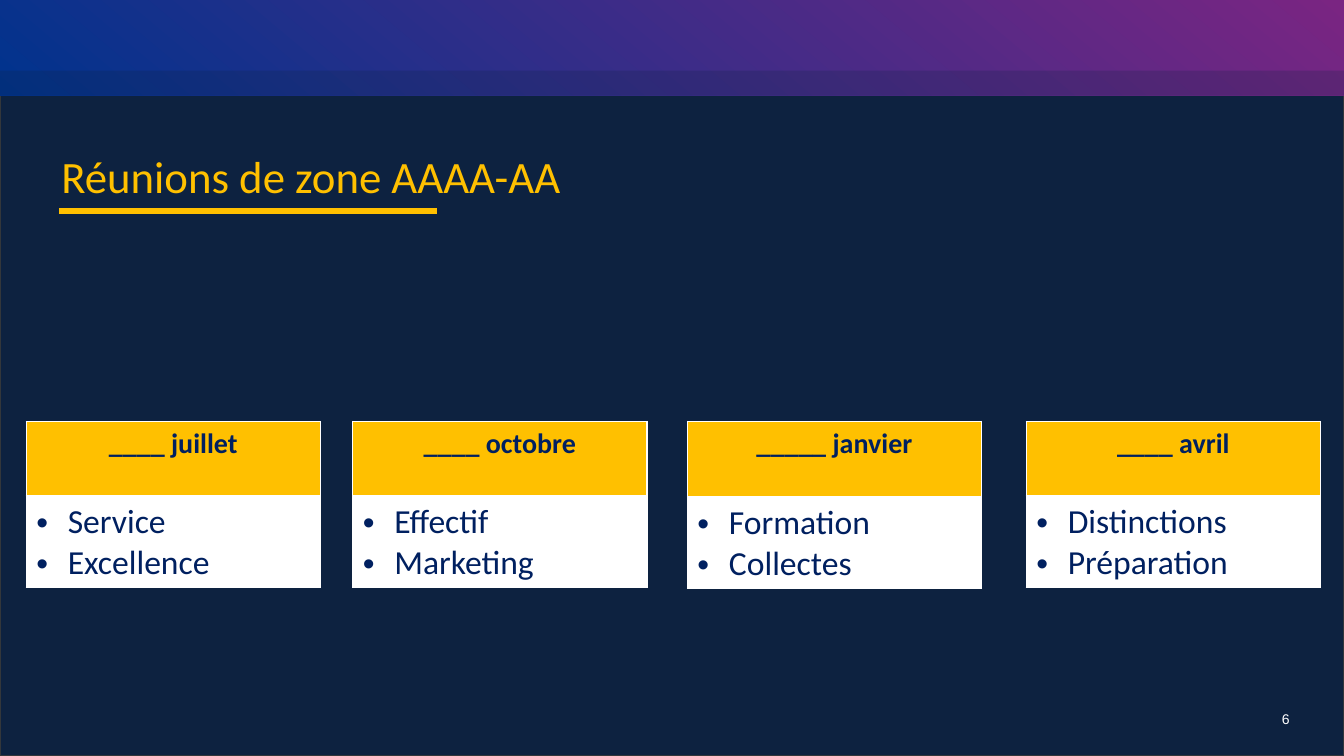
from dataclasses import dataclass

from lxml.etree import SubElement
from pptx import Presentation
from pptx.dml.color import RGBColor
from pptx.enum.shapes import MSO_CONNECTOR, MSO_SHAPE
from pptx.enum.text import MSO_AUTO_SIZE, PP_ALIGN
from pptx.oxml.ns import qn
from pptx.shapes.autoshape import Shape
from pptx.slide import Slide
from pptx.table import _Cell
from pptx.text.text import TextFrame
from pptx.util import Pt

NAVY = "0D2240"
INK = "002060"
GOLD = "FFC000"
WHITE = "FFFFFF"


@dataclass
class Meeting:
    left: float
    month: str
    topics: list[str]
    header_height: float = 54


MEETINGS = [
    Meeting(18.7, "____ juillet", ["Service", "Excellence"]),
    Meeting(252, "____ octobre", ["Effectif", "Marketing"]),
    Meeting(491, "_____ janvier", ["Formation", "Collectes"], 54.7),
    Meeting(733, "____ avril", ["Distinctions", "Préparation"]),
]


def color(value: str) -> RGBColor:
    return RGBColor.from_string(value)


def write_text(frame: TextFrame, *lines: str, size: float, ink: str, font: str = "Calibri",
               bold: bool = False, align: PP_ALIGN = PP_ALIGN.LEFT, bullet: bool = False) -> None:
    frame.word_wrap = True
    for index, line in enumerate(lines):
        paragraph = frame.add_paragraph() if index else frame.paragraphs[0]
        paragraph.alignment = align
        run = paragraph.add_run()
        run.text = line
        run.font.size = Pt(size)
        run.font.name = font
        run.font.bold = bold
        run.font.color.rgb = color(ink)
        if bullet:
            properties = paragraph._p.get_or_add_pPr()
            properties.set("marL", str(Pt(22.5)))
            properties.set("indent", str(-Pt(22.5)))
            SubElement(properties, qn("a:buFont"), typeface="Arial")
            SubElement(properties, qn("a:buChar"), char="•")


def add_band(slide: Slide, top: float, height: float) -> Shape:
    shape = slide.shapes.add_shape(MSO_SHAPE.RECTANGLE, 0, Pt(top), Pt(960), Pt(height))
    shape.shadow.inherit = False
    shape.fill.solid()
    shape.fill.fore_color.rgb = color(NAVY)
    shape.line.fill.background()
    return shape


def add_background(slide: Slide) -> None:
    backdrop = add_band(slide, 0, 540)
    backdrop.line.color.rgb = color("33373B")
    backdrop.line.width = Pt(0.75)

    banner = add_band(slide, 0, 68.4)
    banner.fill.gradient()
    banner.fill.gradient_angle = 50
    for stop, position, value in zip(banner.fill.gradient_stops, (0, 1), ("00338D", "7A2582")):
        stop.position = position
        stop.color.rgb = color(value)

    shade = add_band(slide, 50.4, 18)
    shade_color = shade._element.spPr.find(f"{qn('a:solidFill')}/{qn('a:srgbClr')}")
    SubElement(shade_color, qn("a:alpha"), val="21000")


def add_underline(slide: Slide) -> None:
    underline = slide.shapes.add_connector(
        MSO_CONNECTOR.STRAIGHT, Pt(42), Pt(150.5), Pt(312), Pt(150.5))
    underline.line.color.rgb = color(GOLD)
    underline.line.width = Pt(4.5)
    SubElement(underline._element.spPr, qn("a:effectLst"))


def format_cell(cell: _Cell, fill: str, bottom_width: float) -> None:
    properties = cell._tc.get_or_add_tcPr()
    for side, width in (("L", 1), ("R", 1), ("T", 1), ("B", bottom_width)):
        border = SubElement(properties, qn(f"a:ln{side}"), w=str(Pt(width)))
        SubElement(SubElement(border, qn("a:solidFill")), qn("a:srgbClr"), val=WHITE)
    cell.fill.solid()
    cell.fill.fore_color.rgb = color(fill)


def add_meeting(slide: Slide, meeting: Meeting) -> None:
    topics_height = 60.5
    table = slide.shapes.add_table(
        2, 1, Pt(meeting.left), Pt(301), Pt(210.2),
        Pt(meeting.header_height + topics_height)).table
    table.first_row = False
    table.horz_banding = False
    table.rows[0].height = Pt(meeting.header_height)
    table.rows[1].height = Pt(topics_height)
    header, body = table.cell(0, 0), table.cell(1, 0)
    format_cell(header, GOLD, 3)
    format_cell(body, WHITE, 1)
    write_text(header.text_frame, meeting.month, size=20, ink=INK, bold=True,
               align=PP_ALIGN.CENTER)
    write_text(body.text_frame, *meeting.topics, size=24, ink=INK, bullet=True)


def main() -> None:
    presentation = Presentation()
    presentation.slide_width = Pt(960)
    presentation.slide_height = Pt(540)
    slide = presentation.slides.add_slide(presentation.slide_layouts[6])

    add_background(slide)
    page_number = slide.shapes.add_textbox(Pt(908.6), Pt(504), Pt(51.4), Pt(36))
    write_text(page_number.text_frame, "6", size=10, ink=WHITE, font="Arial")
    title = slide.shapes.add_textbox(Pt(36.7), Pt(103), Pt(408), Pt(46))
    title.text_frame.auto_size = MSO_AUTO_SIZE.SHAPE_TO_FIT_TEXT
    write_text(title.text_frame, "Réunions de zone AAAA-AA", size=32, ink=GOLD)
    for meeting in MEETINGS:
        add_meeting(slide, meeting)
    add_underline(slide)

    presentation.save("out.pptx")


if __name__ == "__main__":
    main()
